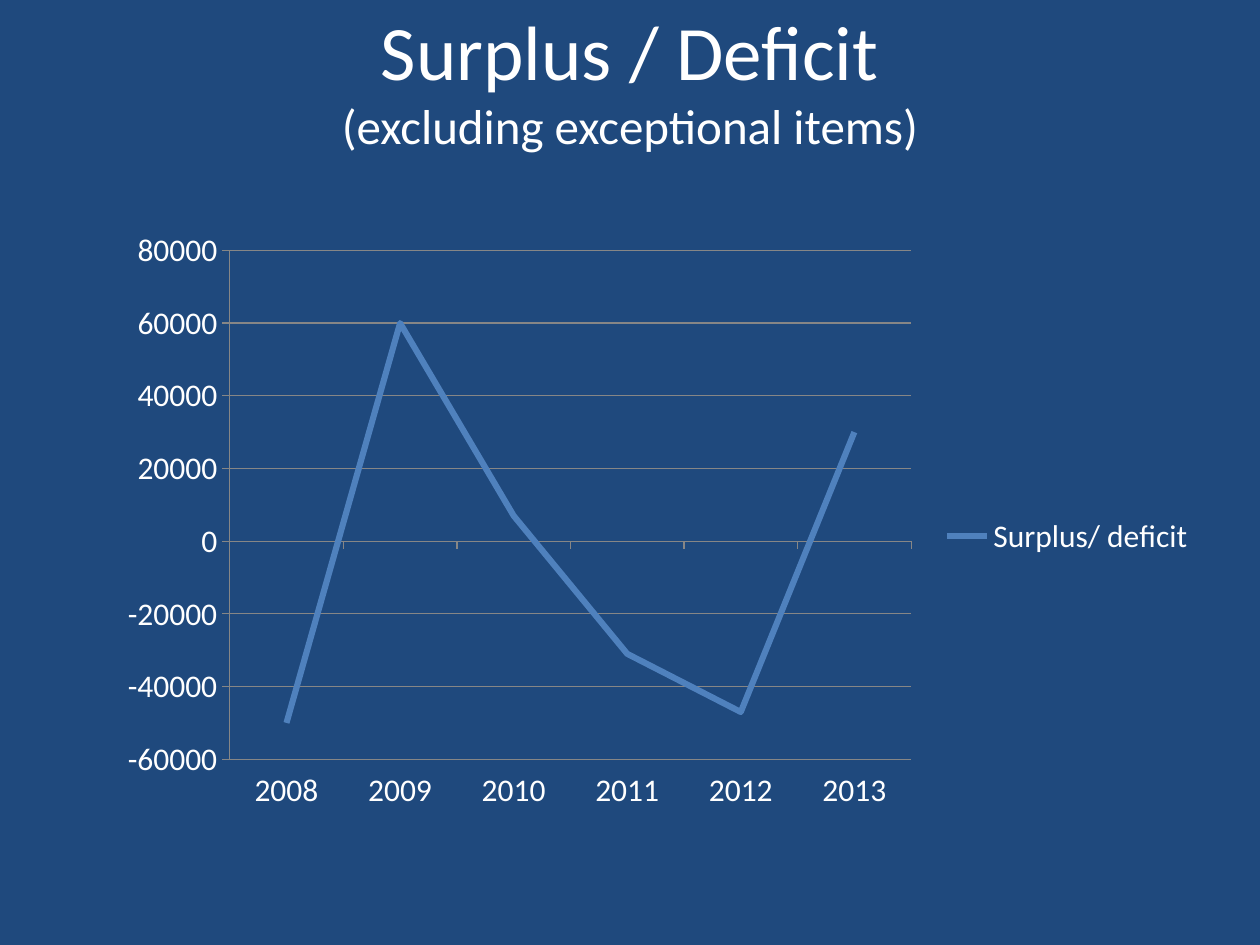
from lxml import etree
from pptx import Presentation
from pptx.chart.data import CategoryChartData
from pptx.dml.color import RGBColor
from pptx.enum.chart import XL_CHART_TYPE, XL_LEGEND_POSITION, XL_MARKER_STYLE, XL_TICK_LABEL_POSITION, XL_TICK_MARK
from pptx.enum.text import MSO_ANCHOR, PP_ALIGN
from pptx.oxml.ns import qn
from pptx.util import Inches, Pt

LINE = XL_CHART_TYPE.LINE_STACKED
RIGHT = XL_LEGEND_POSITION.RIGHT
NO_MARKER = XL_MARKER_STYLE.NONE
LOW = XL_TICK_LABEL_POSITION.LOW
OUTSIDE = XL_TICK_MARK.OUTSIDE
MIDDLE = MSO_ANCHOR.MIDDLE
CENTER = PP_ALIGN.CENTER

TITLE_LINES = [("Surplus / Deficit", 44), ("(excluding exceptional items)", 28)]
BALANCES = {"2008": -50000, "2009": 60000, "2010": 7000,
            "2011": -31000, "2012": -47000, "2013": 30000}
SERIES_NAME = "Surplus/ deficit"
PLOT_AREA = {"x": 0.137, "y": 0.042, "w": 0.601, "h": 0.816}
FONT = "Calibri"
NAVY, WHITE, BLUE, GRAY = "1F497D", "FFFFFF", "4F81BD", "868686"


def paint(color_format, color):
    color_format.rgb = RGBColor.from_string(color)


def style_font(font, size):
    font.name = FONT
    font.size = Pt(size)
    paint(font.color, WHITE)


def style_line(line, color, width):
    line.width = Pt(width)
    line.fill.solid()
    paint(line.fill.fore_color, color)


def add_title(slide):
    frame = slide.shapes.add_textbox(Inches(0.5), Inches(0.3), Inches(9), Inches(1.25)).text_frame
    frame.word_wrap = True
    frame.vertical_anchor = MIDDLE
    frame.margin_bottom = Inches(0.65)
    for index, (text, size) in enumerate(TITLE_LINES):
        line = frame.add_paragraph() if index else frame.paragraphs[0]
        line.text = text
        line.alignment = CENTER
        style_font(line.font, size)


def place_plot(chart):
    plot_area = chart.plots[0]._element.getparent()
    for old_layout in plot_area.findall(qn("c:layout")):
        plot_area.remove(old_layout)
    layout = etree.Element(qn("c:layout"))
    manual = etree.SubElement(layout, qn("c:manualLayout"))
    settings = {"layoutTarget": "inner", "xMode": "edge", "yMode": "edge", **PLOT_AREA}
    for tag, value in settings.items():
        etree.SubElement(manual, qn(f"c:{tag}")).set("val", str(value))
    plot_area.insert(0, layout)


def add_balance_chart(slide):
    data = CategoryChartData()
    data.categories = list(BALANCES)
    data.add_series(SERIES_NAME, list(BALANCES.values()))
    chart = slide.shapes.add_chart(
        LINE, Inches(0.59), Inches(1.78), Inches(9), Inches(4.95), data).chart
    style_font(chart.font, 18)
    chart.has_title = False
    chart.has_legend = True
    chart.legend.position = RIGHT
    chart.legend.include_in_layout = False

    plot = chart.plots[0]
    plot.vary_by_categories = False
    balance = plot.series[0]
    balance.smooth = False
    balance.marker.style = NO_MARKER
    style_line(balance.format.line, BLUE, 3.5)

    years, amounts = chart.category_axis, chart.value_axis
    for axis in (years, amounts):
        axis.major_tick_mark = OUTSIDE
        style_line(axis.format.line, GRAY, 0.75)
    years.tick_label_position = LOW
    amounts.minimum_scale, amounts.maximum_scale = -60000, 80000
    amounts.major_unit = 20000
    amounts.has_major_gridlines = True
    style_line(amounts.major_gridlines.format.line, GRAY, 0.75)
    place_plot(chart)


def main():
    deck = Presentation()
    deck.slide_width, deck.slide_height = Inches(10), Inches(7.5)
    slide = deck.slides.add_slide(deck.slide_layouts[6])
    slide.background.fill.solid()
    paint(slide.background.fill.fore_color, NAVY)
    add_title(slide)
    add_balance_chart(slide)
    deck.save("out.pptx")


if __name__ == "__main__":
    main()
